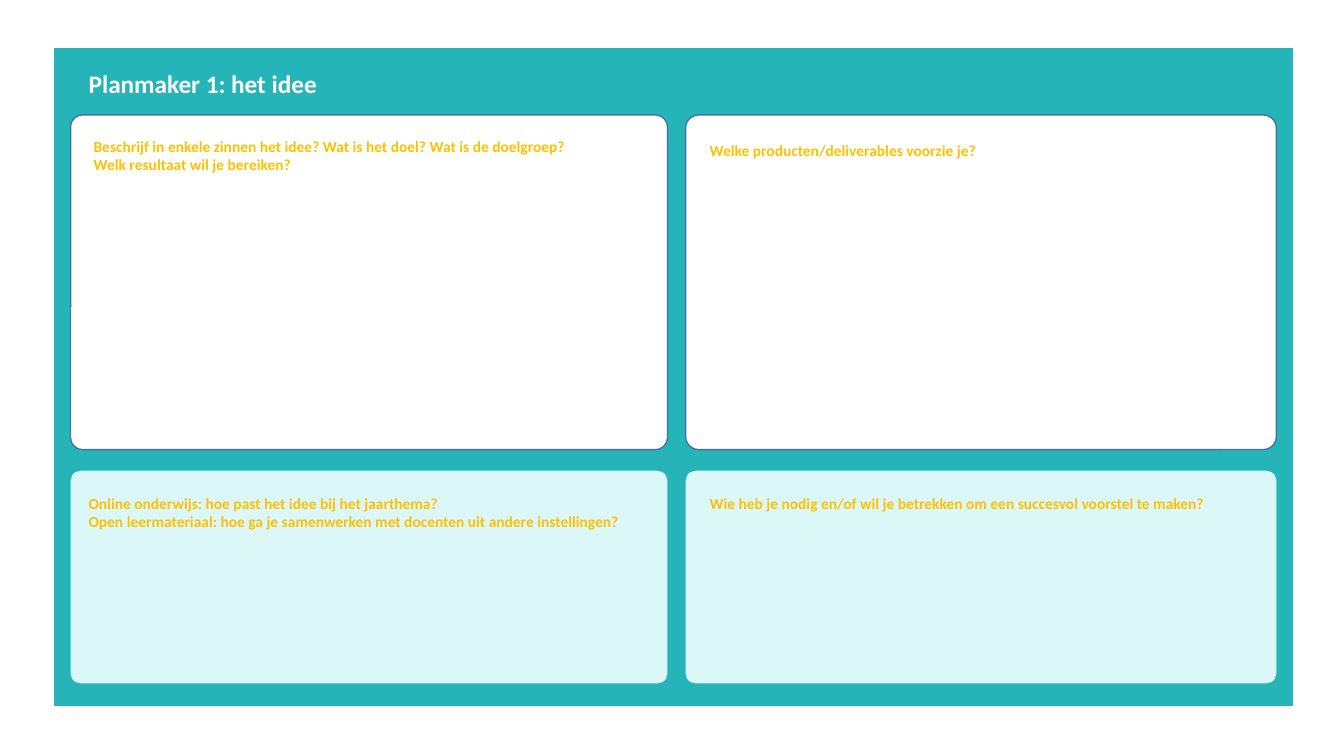
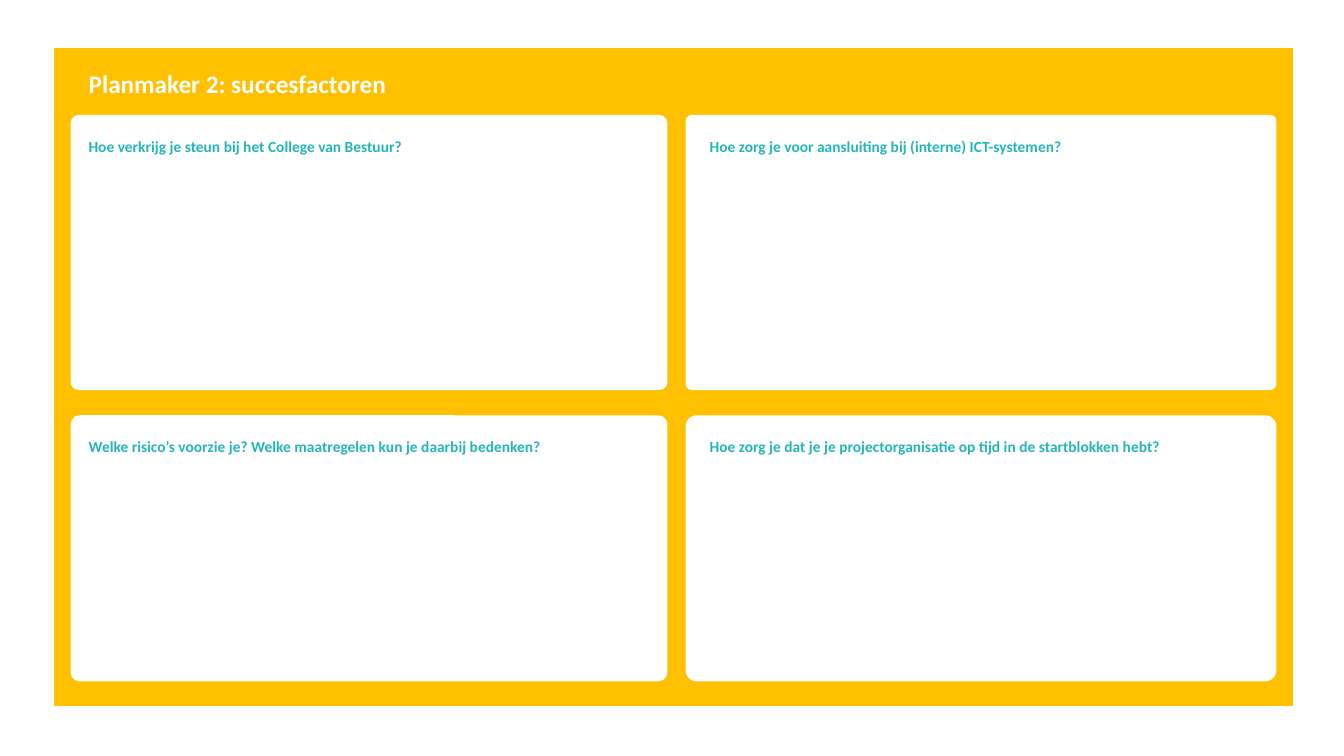
from pptx import Presentation
from pptx.dml.color import RGBColor
from pptx.enum.shapes import MSO_SHAPE as Preset
from pptx.enum.text import MSO_ANCHOR as Anchor, MSO_AUTO_SIZE as AutoSize, PP_ALIGN as Align
from pptx.util import Emu, Pt

PX = 9144
TEAL = RGBColor(0x25, 0xB5, 0xB9)
AMBER = RGBColor(0xFF, 0xC0, 0x00)
WHITE = RGBColor(0xFF, 0xFF, 0xFF)
MINT = RGBColor(0xDC, 0xF7, 0xF8)
BLUE = RGBColor(0x43, 0x73, 0x9E)

COLUMNS = ((70, 592), (680, 586))

PAGES = (
    {
        "title": ("Planmaker 1: het idee", 261),
        "colors": (TEAL, AMBER),
        "rows": (
            (114, 332, WHITE, BLUE, (12, 13)),
            (467, 211, MINT, None, (10, 10)),
        ),
        "prompts": (
            (83, 131, 512, ("Beschrijf in enkele zinnen het idee? Wat is het doel? "
                            "Wat is de doelgroep? Welk resultaat wil je bereiken?",)),
            (694, 135, 337, ("Welke producten/deliverables voorzie je?",)),
            (78, 485, 554, ("Online onderwijs: hoe past het idee bij het jaarthema?",
                            "Open leermateriaal: hoe ga je samenwerken met docenten "
                            "uit andere instellingen?")),
            (694, 485, 533, ("Wie heb je nodig en/of wil je betrekken om een "
                             "succesvol voorstel te maken?",)),
        ),
    },
    {
        "title": ("Planmaker 2: succesfactoren", 333),
        "colors": (AMBER, TEAL),
        "rows": (
            (114, 273, WHITE, None, (8, 6)),
            (412, 264, WHITE, None, (9, 11)),
        ),
        "prompts": (
            (78, 131, 337, ("Hoe verkrijg je steun bij het College van Bestuur?",)),
            (694, 131, 387, ("Hoe zorg je voor aansluiting bij (interne) ICT-systemen?",)),
            (78, 429, 485, ("Welke risico’s voorzie je? Welke maatregelen kun je "
                            "daarbij bedenken?",)),
            (694, 429, 518, ("Hoe zorg je dat je je projectorganisatie op tijd in de "
                             "startblokken hebt?",)),
        ),
    },
)


class Planner:
    """Draw planner pages in one shared style."""

    FRAME = {"word_wrap": True, "auto_size": AutoSize.NONE, "vertical_anchor": Anchor.TOP}
    TITLE = {"name": "Calibri", "size": Pt(18), "bold": True}
    PROMPT = {"name": "Calibri", "size": Pt(11), "bold": True}

    def __init__(self):
        self.deck = Presentation()
        self.deck.slide_width, self.deck.slide_height = self.scale(1333, 750)
        self.slide = None

    def scale(self, *lengths):
        return [Emu(length * PX) for length in lengths]

    def assign(self, target, values):
        for name, value in values.items():
            setattr(target, name, value)

    def page(self, title, width, color):
        self.slide = self.deck.slides.add_slide(self.deck.slide_layouts[5])
        heading = self.slide.shapes.title
        box = self.scale(78, 63, width, 40)
        self.assign(heading, dict(zip(("left", "top", "width", "height"), box)))
        self.fill_text(heading.text_frame, (title,), self.TITLE, WHITE)
        band = self.shape(Preset.RECTANGLE, (54, 48, 1228, 652), color, color)
        heading.element.addprevious(band.element)

    def shape(self, preset, box, fill, line=None):
        shape = self.slide.shapes.add_shape(preset, *self.scale(*box))
        shape.shadow.inherit = False
        shape.fill.solid()
        shape.fill.fore_color.rgb = fill
        if line is None:
            shape.line.fill.background()
        else:
            shape.line.color.rgb = line
            shape.line.width = Pt(1)
        return shape

    def card(self, box, radius, fill, line):
        card = self.shape(Preset.ROUNDED_RECTANGLE, box, fill, line)
        card.adjustments[0] = radius / min(box[2:])

    def prompt(self, left, top, width, lines, color):
        height = 11 + 18 * len(lines)
        box = self.slide.shapes.add_textbox(*self.scale(left, top, width, height))
        self.fill_text(box.text_frame, lines, self.PROMPT, color)

    def fill_text(self, frame, lines, style, color):
        self.assign(frame, self.FRAME)
        frame.text = "\n".join(lines)
        for paragraph in frame.paragraphs:
            paragraph.alignment = Align.LEFT
            for run in paragraph.runs:
                self.assign(run.font, style)
                run.font.color.rgb = color


def main():
    planner = Planner()
    for page in PAGES:
        band_color, prompt_color = page["colors"]
        planner.page(*page["title"], band_color)
        for top, height, fill, line, radii in page["rows"]:
            for (left, width), radius in zip(COLUMNS, radii):
                planner.card((left, top, width, height), radius, fill, line)
        for prompt in page["prompts"]:
            planner.prompt(*prompt, prompt_color)
    planner.deck.save("out.pptx")


if __name__ == "__main__":
    main()
